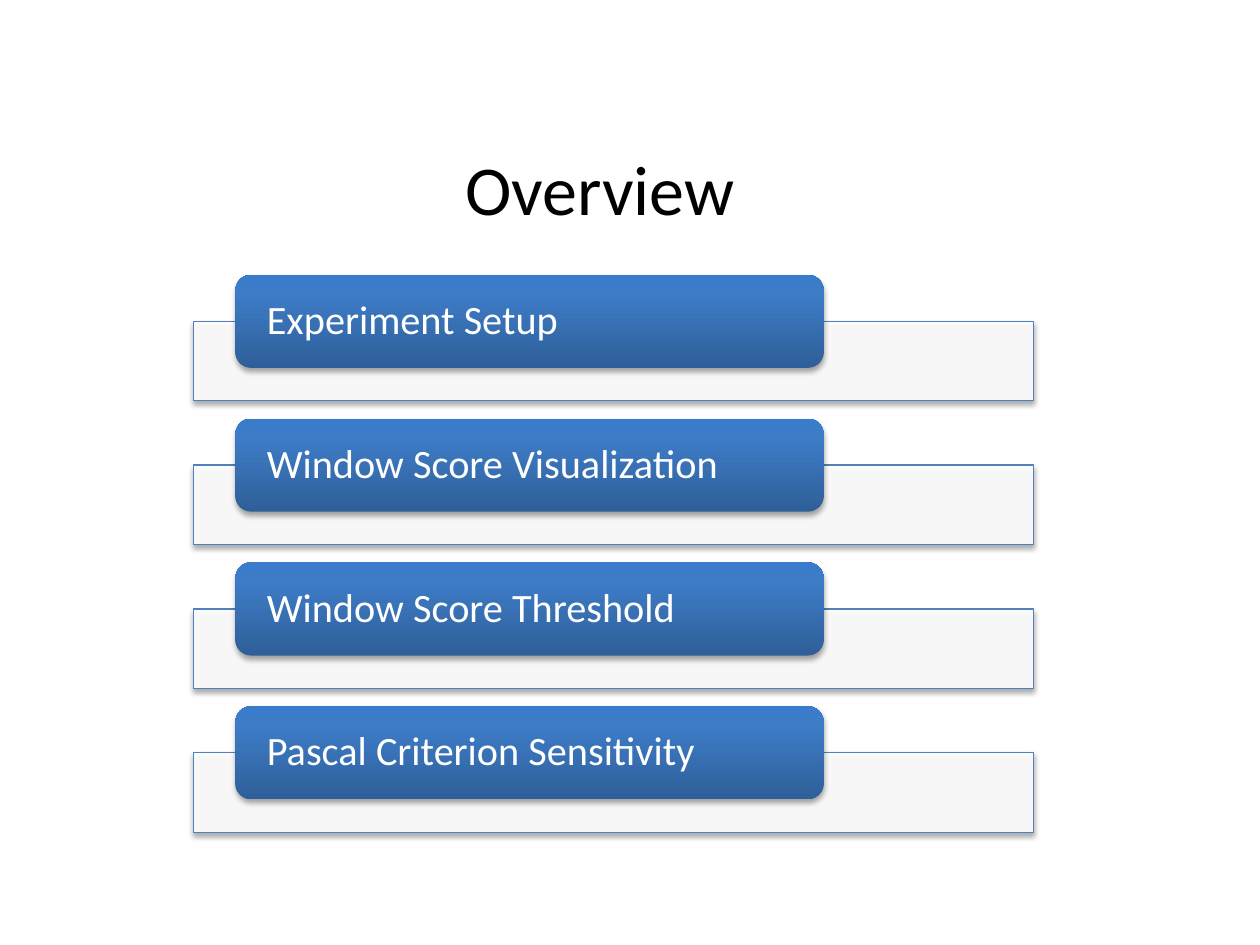
from copy import deepcopy
from dataclasses import dataclass

from lxml.etree import SubElement
from pptx import Presentation
from pptx.dml.color import RGBColor as RGB
from pptx.enum.shapes import MSO_SHAPE as SHAPE
from pptx.enum.text import MSO_ANCHOR as ANCHOR, PP_ALIGN as ALIGN
from pptx.oxml.ns import qn
from pptx.util import Pt


@dataclass(frozen=True)
class Theme:
    font: str = "Calibri"
    title_size: float = 40
    label_size: float = 23
    black: str = "000000"
    white: str = "FFFFFF"
    bar_line: str = "4F81BD"
    label_stops: tuple = ((0, "2F5F99"), (0.8, "3D7CC7"), (1, "3A7CCB"))


def write_text(frame, text, *, font, size, color, align=ALIGN.LEFT,
               spacing=1.0, inset=7.2):
    frame.word_wrap = True
    frame.vertical_anchor = ANCHOR.MIDDLE
    frame.margin_left = frame.margin_right = Pt(inset)
    frame.margin_top = frame.margin_bottom = 0
    paragraph = frame.paragraphs[0]
    paragraph.alignment = align
    paragraph.line_spacing = spacing
    run = paragraph.add_run()
    run.text = text
    run.font.name = font
    run.font.size = Pt(size)
    run.font.color.rgb = RGB.from_string(color)


def set_alpha(color_element, percent):
    SubElement(color_element, qn("a:alpha"), val=str(percent * 1000))


class SlideBuilder:
    def __init__(self, slide, theme):
        self.slide = slide
        self.theme = theme

    def title(self, text, *box):
        shape = self.slide.shapes.add_textbox(*map(Pt, box))
        write_text(shape.text_frame, text, font=self.theme.font,
                   size=self.theme.title_size, color=self.theme.black,
                   align=ALIGN.CENTER)

    def bar(self, *box):
        shape = self.slide.shapes.add_shape(SHAPE.RECTANGLE, *map(Pt, box))
        shape.fill.solid()
        shape.fill.fore_color.rgb = RGB.from_string(self.theme.white)
        fill = shape.element.spPr.find(qn("a:solidFill"))
        set_alpha(fill[0], 90)
        shape.line.color.rgb = RGB.from_string(self.theme.bar_line)
        shape.line.width = Pt(0.75)
        self.add_shadow(shape)

    def label(self, text, *box):
        shape = self.slide.shapes.add_shape(SHAPE.ROUNDED_RECTANGLE,
                                            *map(Pt, box))
        self.fill_gradient(shape)
        shape.line.fill.background()
        self.add_shadow(shape)
        write_text(shape.text_frame, text, font=self.theme.font,
                   size=self.theme.label_size, color=self.theme.white,
                   spacing=0.9, inset=15.3)

    def fill_gradient(self, shape):
        shape.fill.gradient()
        shape.fill.gradient_angle = 90
        # The default gradient has two stops; add the third
        stop_list = next(shape.element.spPr.iter(qn("a:gsLst")))
        stop_list.append(deepcopy(stop_list[0]))
        for stop, (position, color) in zip(shape.fill.gradient_stops,
                                           self.theme.label_stops):
            stop.position = position
            stop.color.rgb = RGB.from_string(color)

    def add_shadow(self, shape):
        shape.shadow.inherit = False
        effects = shape.element.spPr.find(qn("a:effectLst"))
        shadow = SubElement(effects, qn("a:outerShdw"), blurRad=str(Pt(3.1)),
                            dist=str(Pt(1.8)), dir="5400000",
                            rotWithShape="0")
        color = SubElement(shadow, qn("a:srgbClr"), val=self.theme.black)
        set_alpha(color, 35)


TOPICS = ("Experiment Setup", "Window Score Visualization",
          "Window Score Threshold", "Pascal Criterion Sensitivity")
FIRST_TOP, ROW_PITCH = 157, 82.2
BAR_OFFSET = 26.6


def main():
    presentation = Presentation()
    presentation.slide_width, presentation.slide_height = Pt(720), Pt(540)
    slide = presentation.slides.add_slide(presentation.slide_layouts[6])
    builder = SlideBuilder(slide, Theme())

    # Title
    builder.title("Overview", 36.7, 49, 612, 116)

    # One bar with an overlapping label per topic
    for row, topic in enumerate(TOPICS):
        top = FIRST_TOP + row * ROW_PITCH
        builder.bar(110.6, top + BAR_OFFSET, 480, 45.4)
        builder.label(topic, 134.6, top, 336, 53.2)

    presentation.save("out.pptx")


if __name__ == "__main__":
    main()
